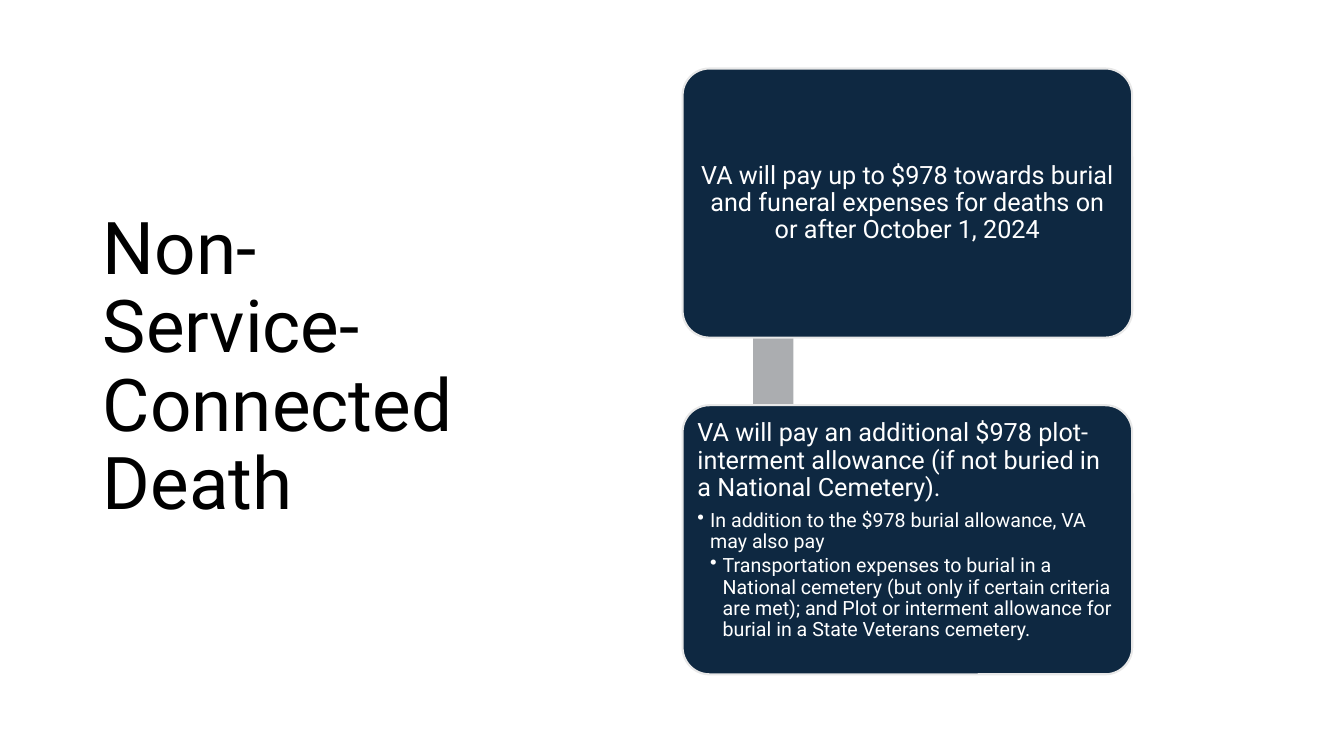
from lxml.etree import SubElement
from pptx import Presentation
from pptx.dml.color import RGBColor
from pptx.enum.shapes import MSO_SHAPE
from pptx.enum.text import MSO_ANCHOR, MSO_AUTO_SIZE, PP_ALIGN
from pptx.oxml.ns import qn
from pptx.util import Inches, Pt

# Content: each card is a list of (level, text)
TITLE = "Non-Service-Connected Death"
CARDS = [
    {"anchor": MSO_ANCHOR.MIDDLE, "align": PP_ALIGN.CENTER, "lines": [
        (0, "VA will pay up to $978 towards burial and funeral expenses "
            "for deaths on or after October 1, 2024"),
    ]},
    {"anchor": MSO_ANCHOR.TOP, "align": PP_ALIGN.LEFT, "lines": [
        (0, "VA will pay an additional $978 plot-interment allowance "
            "(if not buried in a National Cemetery)."),
        (1, "In addition to the $978 burial allowance, VA may also pay"),
        (2, "Transportation expenses to burial in a National cemetery "
            "(but only if certain criteria are met); and Plot or interment "
            "allowance for burial in a State Veterans cemetery."),
    ]},
]

THEME = {
    "font": "Roboto",
    "black": RGBColor.from_string("000000"),
    "white": RGBColor.from_string("FFFFFF"),
    "navy": RGBColor.from_string("0E2841"),
    "edge": RGBColor.from_string("E8E8E8"),
    "link": RGBColor.from_string("ABADB0"),
    "title": 52, "lead": 18, "bullet": 14,
}

# Layout in inches
CARD_X, CARD_Y, CARD_W, CARD_H, CARD_STEP = 6.77, 0.68, 4.46, 2.67, 3.34
LINK_X, LINK_W, LINK_H = 7.47, 0.4, 3.32
INSET, INDENT = 0.07, 0.125


def set_all(obj, values):
    for name, value in values.items():
        setattr(obj, name, value)


def add_text(p, text, size, color):
    p.line_spacing = 0.9
    r = p.add_run()
    r.text = text
    set_all(r.font, {"name": THEME["font"], "size": Pt(size)})
    r.font.color.rgb = color


def add_bullet(p, level):
    p.level = level
    pPr = p._p.get_or_add_pPr()
    pPr.set("marL", str(Inches(INDENT * level)))
    pPr.set("indent", str(-Inches(INDENT)))
    SubElement(pPr, qn("a:buChar")).set("char", "•")


def add_box(slide, kind, x, y, w, h, fill):
    sp = slide.shapes.add_shape(kind, Inches(x), Inches(y), Inches(w), Inches(h))
    sp.shadow.inherit = False
    sp.fill.solid()
    sp.fill.fore_color.rgb = fill
    return sp


def add_card(slide, y, card):
    sp = add_box(slide, MSO_SHAPE.ROUNDED_RECTANGLE,
                 CARD_X, y, CARD_W, CARD_H, THEME["navy"])
    sp.adjustments[0] = 0.1
    sp.line.color.rgb = THEME["edge"]
    sp.line.width = Pt(1.5)
    tf = sp.text_frame
    set_all(tf, {"word_wrap": True, "vertical_anchor": card["anchor"]})
    sides = ("left", "top", "right", "bottom")
    set_all(tf, {f"margin_{side}": Inches(INSET) for side in sides})
    for i, (level, text) in enumerate(card["lines"]):
        p = tf.add_paragraph() if i else tf.paragraphs[0]
        size = THEME["bullet" if level else "lead"]
        p.alignment = card["align"]
        p.space_after = Pt(size * (0.15 if level else 0.35))
        add_text(p, text, size, THEME["white"])
        if level:
            add_bullet(p, level)


prs = Presentation()
prs.slide_width, prs.slide_height = Inches(13.33), Inches(7.5)
slide = prs.slides.add_slide(prs.slide_layouts[5])

# Title
title = slide.shapes.title
set_all(title, {"left": Inches(0.92), "top": Inches(0.61),
                "width": Inches(3.69), "height": Inches(6.09)})
tf = title.text_frame
set_all(tf, {"word_wrap": True, "auto_size": MSO_AUTO_SIZE.NONE,
             "vertical_anchor": MSO_ANCHOR.MIDDLE})
p = tf.paragraphs[0]
p.alignment = PP_ALIGN.LEFT
add_text(p, TITLE, THEME["title"], THEME["black"])

# Link bar between the card centres, behind the cards
link = add_box(slide, MSO_SHAPE.RECTANGLE, LINK_X, CARD_Y + CARD_H / 4,
               LINK_W, LINK_H, THEME["link"])
link.line.fill.background()

# Cards
for i, card in enumerate(CARDS):
    add_card(slide, CARD_Y + i * CARD_STEP, card)

prs.save("out.pptx")
